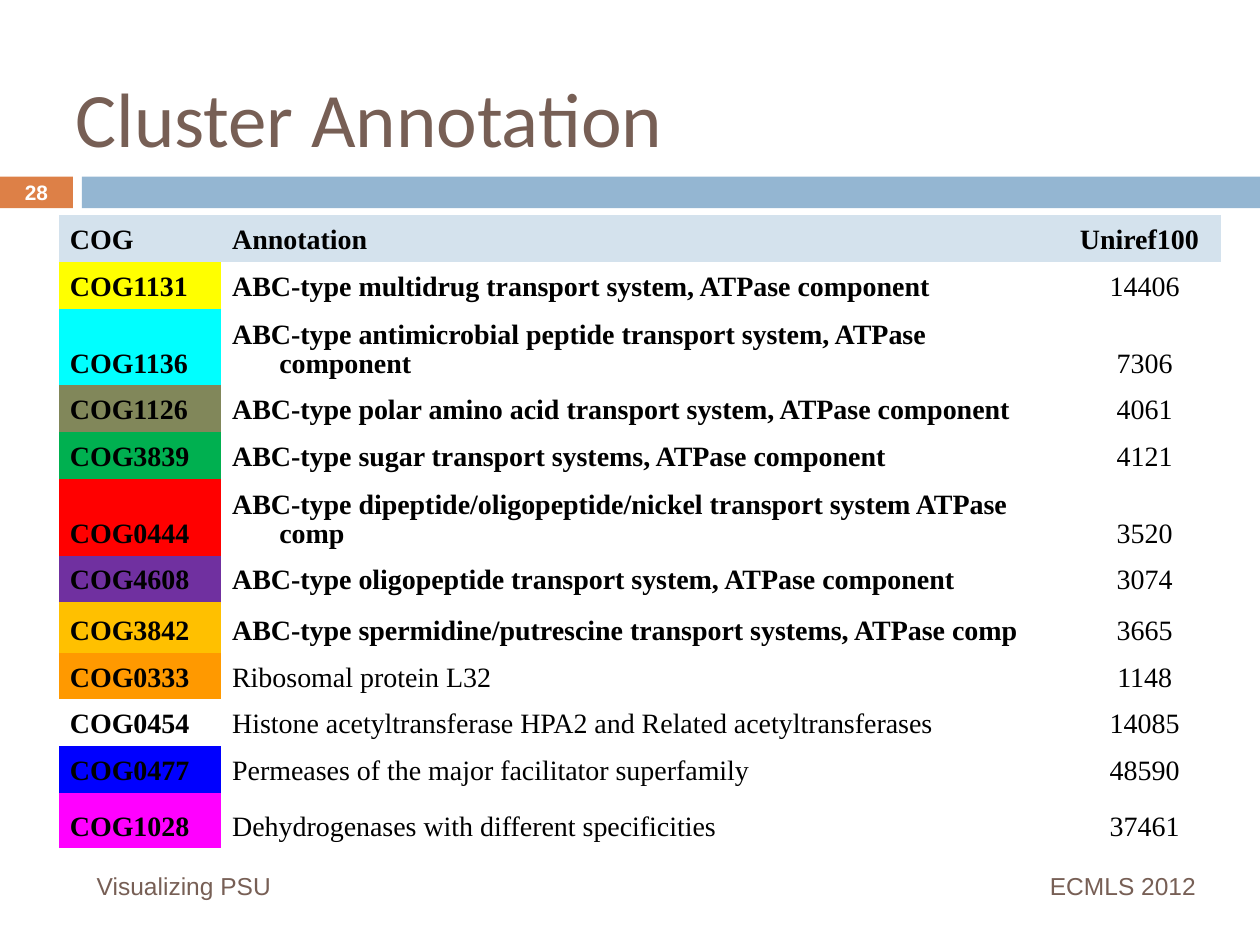
"""Build the Cluster Annotation slide with its table of COG clusters."""
import pptx
import pptx.dml.color
import pptx.enum.shapes
import pptx.enum.text
import pptx.oxml.ns
import pptx.util

Cm = pptx.util.Cm
Pt = pptx.util.Pt
ALIGN = pptx.enum.text.PP_ALIGN
ANCHOR = pptx.enum.text.MSO_ANCHOR

COLORS = {
    "brown": "775F55", "orange": "DD8047", "blue": "94B6D2",
    "header": "D4E2ED", "white": "FFFFFF", "black": "000000",
}
BARS = [
    (0, 3.56, 1.47, 0.64, "orange"),
    (1.65, 3.56, 23.75, 0.64, "blue"),
]
TEXTS = [
    ("Cluster Annotation", (1.27, 0.76, 22.86, 3.18), "Calibri", 44, "brown", False, ALIGN.LEFT),
    ("Visualizing PSU", (1.7, 17.35, 15.06, 1.02), "Arial", 14, "brown", False, ALIGN.LEFT),
    ("28", (0, 3.53, 1.47, 0.69), "Arial", 11.9, "white", True, ALIGN.CENTER),
    ("ECMLS 2012", (16.94, 17.35, 7.42, 1.02), "Arial", 14, "brown", False, ALIGN.RIGHT),
]
HEADER = ("COG", "Annotation", "Uniref100")
CLUSTERS = [
    ("COG1131", "ABC-type multidrug transport system, ATPase component", "14406", "FFFF00"),
    ("COG1136", "ABC-type antimicrobial peptide transport system, ATPase component", "7306", "00FFFF"),
    ("COG1126", "ABC-type polar amino acid transport system, ATPase component", "4061", "81875A"),
    ("COG3839", "ABC-type sugar transport systems, ATPase component", "4121", "00B050"),
    ("COG0444", "ABC-type dipeptide/oligopeptide/nickel transport system ATPase comp", "3520", "FF0000"),
    ("COG4608", "ABC-type oligopeptide transport system, ATPase component", "3074", "7030A0"),
    ("COG3842", "ABC-type spermidine/putrescine transport systems, ATPase comp", "3665", "FFC000"),
    ("COG0333", "Ribosomal protein L32", "1148", "FF9900"),
    ("COG0454", "Histone acetyltransferase HPA2 and Related acetyltransferases", "14085", None),
    ("COG0477", "Permeases of the major facilitator superfamily", "48590", "0000FF"),
    ("COG1028", "Dehydrogenases with different specificities", "37461", "FF00FF"),
]
TABLE_LEFT, TABLE_TOP = 1.18, 4.34
COLUMN_WIDTHS = (3.27, 17.09, 3.07)
ROW_HEIGHT = 0.94
TALL_ROWS = {2: 1.55, 5: 1.55, 7: 1.02, 11: 1.12}
NO_GRID_STYLE = "{2D5ABB26-0587-4C30-8999-92F81FD0307C}"


def rgb(value):
    return pptx.dml.color.RGBColor.from_string(value)


def style_paragraph(p, font, size, color, bold, align):
    p.alignment = align
    for r in p.runs:
        r.font.name = font
        r.font.size = Pt(size)
        r.font.bold = bold
        r.font.color.rgb = rgb(COLORS[color])


def add_bar(s, left, top, width, height, color):
    sp = s.shapes.add_shape(pptx.enum.shapes.MSO_SHAPE.RECTANGLE,
                            Cm(left), Cm(top), Cm(width), Cm(height))
    sp.shadow.inherit = False
    sp.fill.solid()
    sp.fill.fore_color.rgb = rgb(COLORS[color])
    sp.line.fill.background()


def add_text(s, text, box, *style):
    tf = s.shapes.add_textbox(*map(Cm, box)).text_frame
    tf.word_wrap = True
    tf.vertical_anchor = ANCHOR.MIDDLE
    tf.text = text
    style_paragraph(tf.paragraphs[0], *style)


def fill_cell(cell, text, fill, bold, align):
    cell.text_frame.text = text
    cell.vertical_anchor = ANCHOR.BOTTOM
    cell.margin_left = cell.margin_right = Cm(0.23)
    cell.margin_top, cell.margin_bottom = Cm(0.15), Cm(0.13)
    if fill:
        cell.fill.solid()
        cell.fill.fore_color.rgb = rgb(fill)
    else:
        cell.fill.background()
    p = cell.text_frame.paragraphs[0]
    style_paragraph(p, "Times New Roman", 16, "black", bold, align)
    p.line_spacing = 0.93
    pPr = p._p.get_or_add_pPr()
    pPr.set("marL", str(Cm(0.95)))
    pPr.set("indent", str(Cm(-0.95)))


def add_cluster_table(s):
    heights = [TALL_ROWS.get(i, ROW_HEIGHT) for i in range(len(CLUSTERS) + 1)]
    frame = s.shapes.add_table(len(heights), len(COLUMN_WIDTHS), Cm(TABLE_LEFT), Cm(TABLE_TOP),
                               Cm(sum(COLUMN_WIDTHS)), Cm(sum(heights)))
    frame.element.find(".//" + pptx.oxml.ns.qn("a:tableStyleId")).text = NO_GRID_STYLE
    table = frame.table
    table.first_row = table.horz_banding = False
    for column, width in zip(table.columns, COLUMN_WIDTHS):
        column.width = Cm(width)
    for row, height in zip(table.rows, heights):
        row.height = Cm(height)
    for j, text in enumerate(HEADER):
        fill_cell(table.cell(0, j), text, COLORS["header"], True, ALIGN.LEFT)
    for i, (cog, annotation, count, color) in enumerate(CLUSTERS, 1):
        fill_cell(table.cell(i, 0), cog, color, True, ALIGN.LEFT)
        fill_cell(table.cell(i, 1), annotation, None, annotation.startswith("ABC"), ALIGN.LEFT)
        fill_cell(table.cell(i, 2), count, None, False, ALIGN.CENTER)


def main():
    prs = pptx.Presentation()
    prs.slide_width, prs.slide_height = Cm(25.4), Cm(19.05)
    s = prs.slides.add_slide(prs.slide_layouts[6])
    for bar in BARS:
        add_bar(s, *bar)
    for text in TEXTS:
        add_text(s, *text)
    add_cluster_table(s)
    prs.save("out.pptx")


if __name__ == "__main__":
    main()
